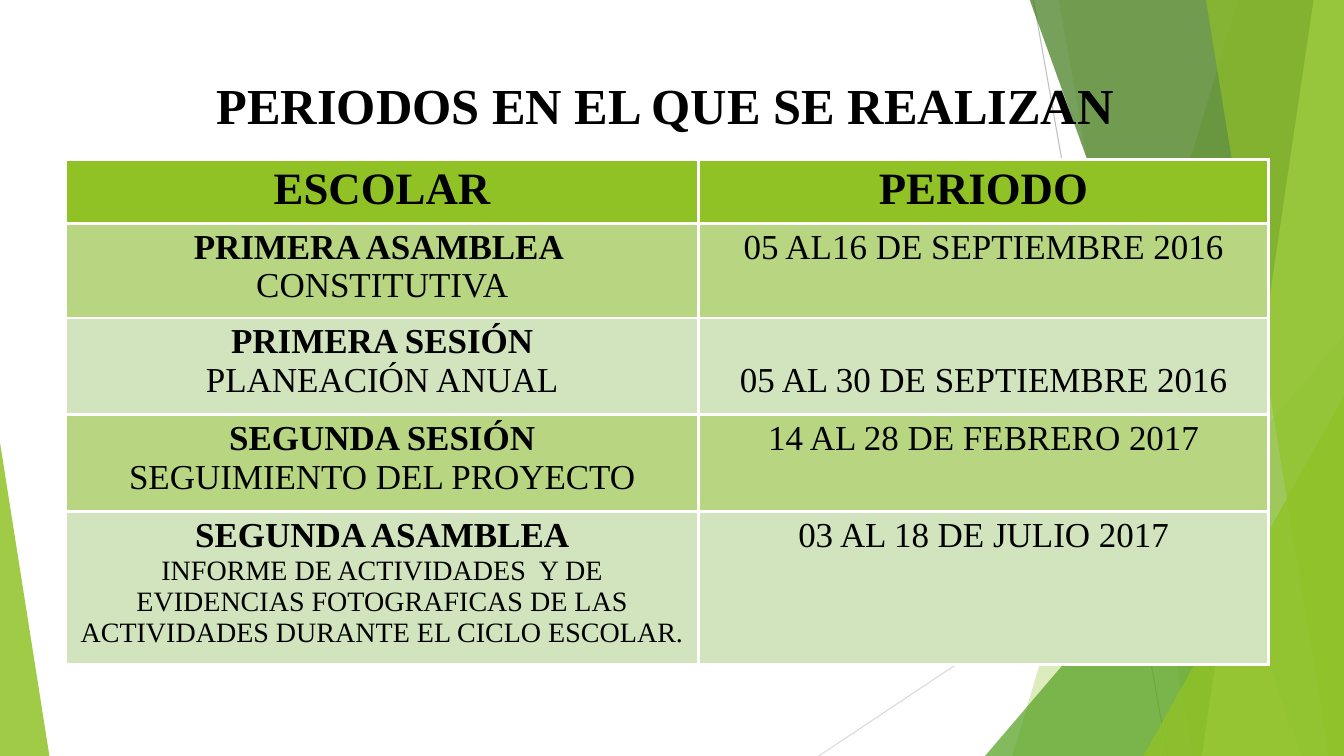
from lxml import etree
from pptx import Presentation
from pptx import util as u
from pptx.dml.color import RGBColor
from pptx.enum import shapes, text
from pptx.oxml import ns

HUES = {
    "green": "90C226", "leaf": "54A021", "dark": "3F7819", "lime": "C0E474",
    "band": "B8D582", "pale": "D2E4BE", "white": "FFFFFF", "black": "000000",
    "gray": "BFBFBF", "mist": "D9D9D9",
}


class Deck:
    """Hold the style and the current slide, and draw each kind of element."""

    font = "Times New Roman"

    def __init__(self, wide, high):
        self.prs = Presentation()
        self.prs.slide_width, self.prs.slide_height = u.Inches(wide), u.Inches(high)
        self.slide = self.prs.slides.add_slide(self.prs.slide_layouts[6])
        self.items = self.slide.shapes

    def hue(self, name):
        return RGBColor.from_string(HUES[name])

    def sub(self, node, tag, **attrs):
        return etree.SubElement(node, ns.qn(tag), **attrs)

    def line(self, start, end, hue):
        ends = [u.Inches(v) for v in (*start, *end)]
        line = self.items.add_connector(shapes.MSO_CONNECTOR.STRAIGHT, *ends)
        line.line.color.rgb = self.hue(hue)
        line.line.width = u.Pt(0.75)
        self.sub(line._element.spPr, "a:effectLst")

    def paint(self, shape, hue, alpha):
        shape.shadow.inherit = False
        shape.line.fill.background()
        shape.fill.solid()
        shape.fill.fore_color.rgb = self.hue(hue)
        color = shape._element.spPr.find(".//" + ns.qn("a:srgbClr"))
        self.sub(color, "a:alpha", val=str(alpha * 1000))

    def blade(self, top, foot, hue, alpha):
        spots = [(top, -0.01), (13.33, -0.01), (13.33, 7.5), (foot, 7.5)]
        spots = [(u.Inches(x), u.Inches(y)) for x, y in spots]
        pen = self.items.build_freeform(*spots[0])
        pen.add_line_segments(spots[1:], close=True)
        self.paint(pen.convert_to_shape(), hue, alpha)

    def wedge(self, box, apex, hue, alpha):
        shape = self.items.add_shape(
            shapes.MSO_SHAPE.ISOSCELES_TRIANGLE, *map(u.Inches, box))
        shape.adjustments[0] = apex
        self.paint(shape, hue, alpha)

    def label(self, frame, lines):
        frame.word_wrap = True
        for i, (words, size, bold) in enumerate(lines):
            para = frame.add_paragraph() if i else frame.paragraphs[0]
            para.alignment = text.PP_ALIGN.CENTER
            run = para.add_run()
            run.text = words
            run.font.name, run.font.size, run.font.bold = self.font, u.Pt(size), bold
            run.font.color.rgb = self.hue("black")

    def title(self, box, words):
        frame = self.items.add_textbox(*map(u.Inches, box)).text_frame
        frame.vertical_anchor = text.MSO_ANCHOR.BOTTOM
        self.label(frame, [(words, 36, True)])

    def edge(self, cell):
        props = cell._tc.get_or_add_tcPr()
        for i, side in enumerate("LRTB"):
            rim = etree.Element(ns.qn("a:ln" + side), w=str(u.Pt(2.25)))
            fill = self.sub(rim, "a:solidFill")
            self.sub(fill, "a:srgbClr", val=HUES["white"])
            props.insert(i, rim)

    def table(self, box, cols, rows, cells, fills):
        table = self.items.add_table(len(rows), len(cols), *map(u.Inches, box)).table
        for col, wide in zip(table.columns, cols):
            col.width = u.Inches(wide)
        for r, high in enumerate(rows):
            table.rows[r].height = u.Inches(high)
            for c, lines in enumerate(cells[r]):
                cell = table.cell(r, c)
                cell.fill.solid()
                cell.fill.fore_color.rgb = self.hue(fills[r])
                self.label(cell.text_frame, lines)
                self.edge(cell)
        return table


def main():
    deck = Deck(13.33, 7.5)
    deck.line((10.25, 0), (11.58, 7.5), "gray")
    deck.line((13.33, 4.03), (8.12, 7.5), "mist")
    deck.blade(12.28, 10.04, "green", 30)
    deck.blade(10.5, 11.83, "green", 20)
    deck.wedge((9.77, 3.33, 3.56, 4.17), 1, "leaf", 72)
    deck.blade(10.21, 12.91, "dark", 70)
    deck.blade(13.03, 11.92, "lime", 70)
    deck.blade(11.96, 13.18, "green", 65)
    deck.wedge((11.34, 3.93, 1.99, 3.57), 1, "green", 80)
    deck.wedge((0, 4.39, 0.49, 3.11), 0, "green", 85)
    deck.title((0.65, 0.67, 11.9, 0.71), "PERIODOS EN EL QUE SE REALIZAN")

    report = ("INFORME DE ACTIVIDADES  Y DE EVIDENCIAS FOTOGRAFICAS DE LAS "
              "ACTIVIDADES DURANTE EL CICLO ESCOLAR.")
    events = [
        ("PRIMERA ASAMBLEA ", "CONSTITUTIVA", 25, "05 AL16 DE SEPTIEMBRE 2016"),
        ("PRIMERA SESIÓN", "PLANEACIÓN ANUAL", 25, "05 AL 30 DE SEPTIEMBRE 2016"),
        ("SEGUNDA SESIÓN", "SEGUIMIENTO DEL PROYECTO", 25, "14 AL 28 DE FEBRERO 2017"),
        ("SEGUNDA ASAMBLEA", report, 20, "03 AL 18 DE JULIO 2017"),
    ]
    cells = [[[(head, 32, True)] for head in ("ESCOLAR", "PERIODO")]]
    for name, topic, size, dates in events:
        cells.append([[(name, 25, True), (topic, size, False)], [(dates, 25, False)]])
    table = deck.table(
        (0.65, 1.58, 11.93, 5), (6.28, 5.65), (0.63, 0.94, 0.96, 0.96, 1.51),
        cells, ("green", "band", "pale", "band", "pale"))
    table.cell(2, 1).margin_top = u.Inches(0.43)
    deck.prs.save("out.pptx")


if __name__ == "__main__":
    main()
